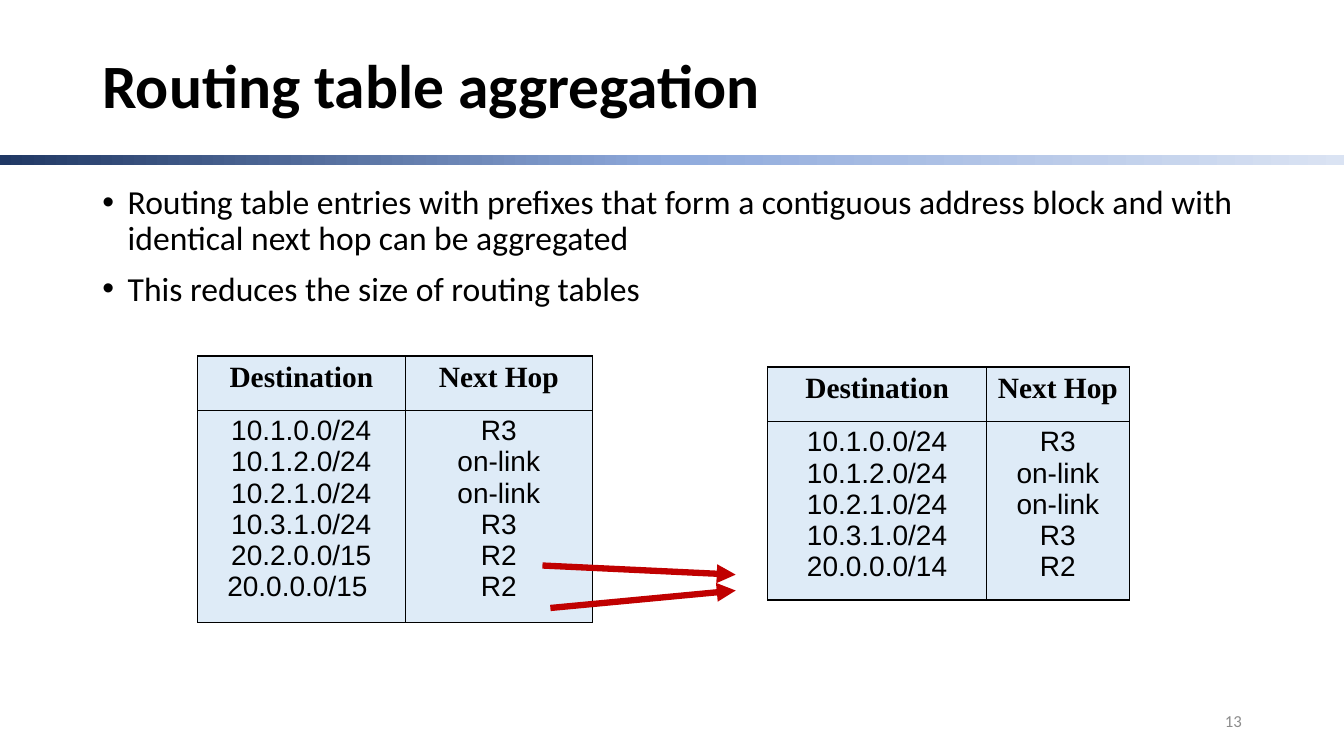
import pptx
import pptx.util
import pptx.dml.color
import pptx.enum.shapes
import pptx.enum.text
import pptx.oxml.ns
from lxml import etree
from pptx.util import Cm, Pt

COLORS = {
    "text": "000000", "cell": "DEEBF7", "arrow": "C00000", "number": "8C8C8C",
    "bar_start": "203864", "bar_middle": "8FAADC", "bar_end": "DAE3F3",
}
ALIGN = pptx.enum.text.PP_ALIGN
ANCHOR = pptx.enum.text.MSO_ANCHOR


def rgb(name):
    return pptx.dml.color.RGBColor.from_string(COLORS[name])


def add_xml(parent, tag, **attrs):
    return etree.SubElement(parent, pptx.oxml.ns.qn(tag), attrs)


def add_xml_color(parent, name):
    add_xml(parent, "a:srgbClr", val=COLORS[name])


class SlideBuilder:
    body_font = "Calibri"
    head_font = "Times New Roman"
    cell_font = "Arial"

    def __init__(self, prs):
        self.s = prs.slides.add_slide(prs.slide_layouts[6])

    def style(self, p, size, font, color="text", bold=False, align=ALIGN.LEFT):
        p.alignment = align
        p.font.size = Pt(size)
        p.font.name = font
        p.font.bold = bold
        p.font.color.rgb = rgb(color)

    def gradient_bar(self, x, y, w, h, names):
        """Rectangle blending evenly from left to right through the named colours."""
        sp = self.s.shapes.add_shape(
            pptx.enum.shapes.MSO_SHAPE.RECTANGLE, Cm(x), Cm(y), Cm(w), Cm(h))
        sp.shadow.inherit = False
        sp.line.fill.background()
        sp.fill.gradient()
        sp.fill.gradient_angle = 0
        stops = sp.element.spPr.find(".//" + pptx.oxml.ns.qn("a:gsLst"))
        for stop in list(stops):
            stops.remove(stop)
        for i, name in enumerate(names):
            pos = 100000 * i // (len(names) - 1)
            add_xml_color(add_xml(stops, "a:gs", pos=str(pos)), name)

    def text(self, x, y, w, h, lines, size, anchor=ANCHOR.MIDDLE, spacing=None,
             before=None, bullet=False, **style):
        tf = self.s.shapes.add_textbox(Cm(x), Cm(y), Cm(w), Cm(h)).text_frame
        tf.word_wrap = True
        tf.vertical_anchor = anchor
        for i, line in enumerate(lines):
            p = tf.paragraphs[0] if i == 0 else tf.add_paragraph()
            p.add_run().text = line
            p.line_spacing = spacing
            p.space_before = before
            if bullet:
                pPr = p._p.get_or_add_pPr()
                pPr.set("marL", str(Cm(0.64)))
                pPr.set("indent", str(-Cm(0.64)))
                add_xml(pPr, "a:buFont", typeface="Arial")
                add_xml(pPr, "a:buChar", char="•")
            self.style(p, size, self.body_font, **style)

    def cell(self, cell, lines, size, font, bold):
        p = cell.text_frame.paragraphs[0]
        for i, line in enumerate(lines):
            if i:
                p.add_line_break()
            p.add_run().text = line
        self.style(p, size, font, bold=bold, align=ALIGN.CENTER)
        tcPr = cell._tc.get_or_add_tcPr()
        for side in "LRTB":
            ln = add_xml(tcPr, "a:ln" + side, w=str(Pt(1)))
            add_xml_color(add_xml(ln, "a:solidFill"), "text")
        cell.fill.solid()
        cell.fill.fore_color.rgb = rgb("cell")

    def routing_table(self, x, y, widths, heights, routes):
        """Header row above one row that lists all routes as (destination, next hop)."""
        table = self.s.shapes.add_table(
            2, 2, Cm(x), Cm(y), Cm(sum(widths)), Cm(sum(heights))).table
        table.first_row = table.horz_banding = False
        for row, h in zip(table.rows, heights):
            row.height = Cm(h)
        columns = zip(("Destination", "Next Hop"), zip(*routes), widths)
        for c, (head, values, w) in enumerate(columns):
            table.columns[c].width = Cm(w)
            self.cell(table.cell(0, c), [head], 21, self.head_font, True)
            self.cell(table.cell(1, c), values, 20, self.cell_font, False)

    def arrow(self, x1, y1, x2, y2):
        line = self.s.shapes.add_connector(
            pptx.enum.shapes.MSO_CONNECTOR.STRAIGHT, Cm(x1), Cm(y1), Cm(x2), Cm(y2))
        line.line.color.rgb = rgb("arrow")
        line.line.width = Pt(4.5)
        add_xml(line.line._get_or_add_ln(), "a:tailEnd", type="triangle")
        add_xml(line._element.spPr, "a:effectLst")


def main():
    prs = pptx.Presentation()
    prs.slide_width, prs.slide_height = Cm(33.87), Cm(19.05)
    b = SlideBuilder(prs)

    b.gradient_bar(0, 3.91, 33.87, 0.24, ["bar_start", "bar_middle", "bar_end"])
    b.text(2.33, 1.01, 29.21, 2.46, ["Routing table aggregation"], 44,
           spacing=0.9, bold=True)
    b.text(2.33, 4.55, 29.21, 12.62, [
        "Routing table entries with prefixes that form a contiguous address block "
        "and with identical next hop can be aggregated",
        "This reduces the size of routing tables",
    ], 24, anchor=ANCHOR.TOP, spacing=0.9, before=Pt(10), bullet=True)

    shared = [("10.1.0.0/24", "R3"), ("10.1.2.0/24", "on-link"),
              ("10.2.1.0/24", "on-link"), ("10.3.1.0/24", "R3")]
    b.routing_table(19.35, 9.25, (5.51, 3.6), (1.37, 4.5),
                    shared + [("20.0.0.0/14", "R2")])
    b.routing_table(4.98, 8.97, (5.23, 4.72), (1.37, 5.33),
                    shared + [("20.2.0.0/15", "R2"), ("20.0.0.0/15 ", "R2")])

    b.arrow(13.67, 14.25, 18.54, 14.48)
    b.arrow(13.87, 15.32, 18.54, 14.88)
    b.text(23.93, 17.65, 7.62, 1.02, ["13"], 12, color="number", align=ALIGN.RIGHT)

    prs.save("out.pptx")


if __name__ == "__main__":
    main()
